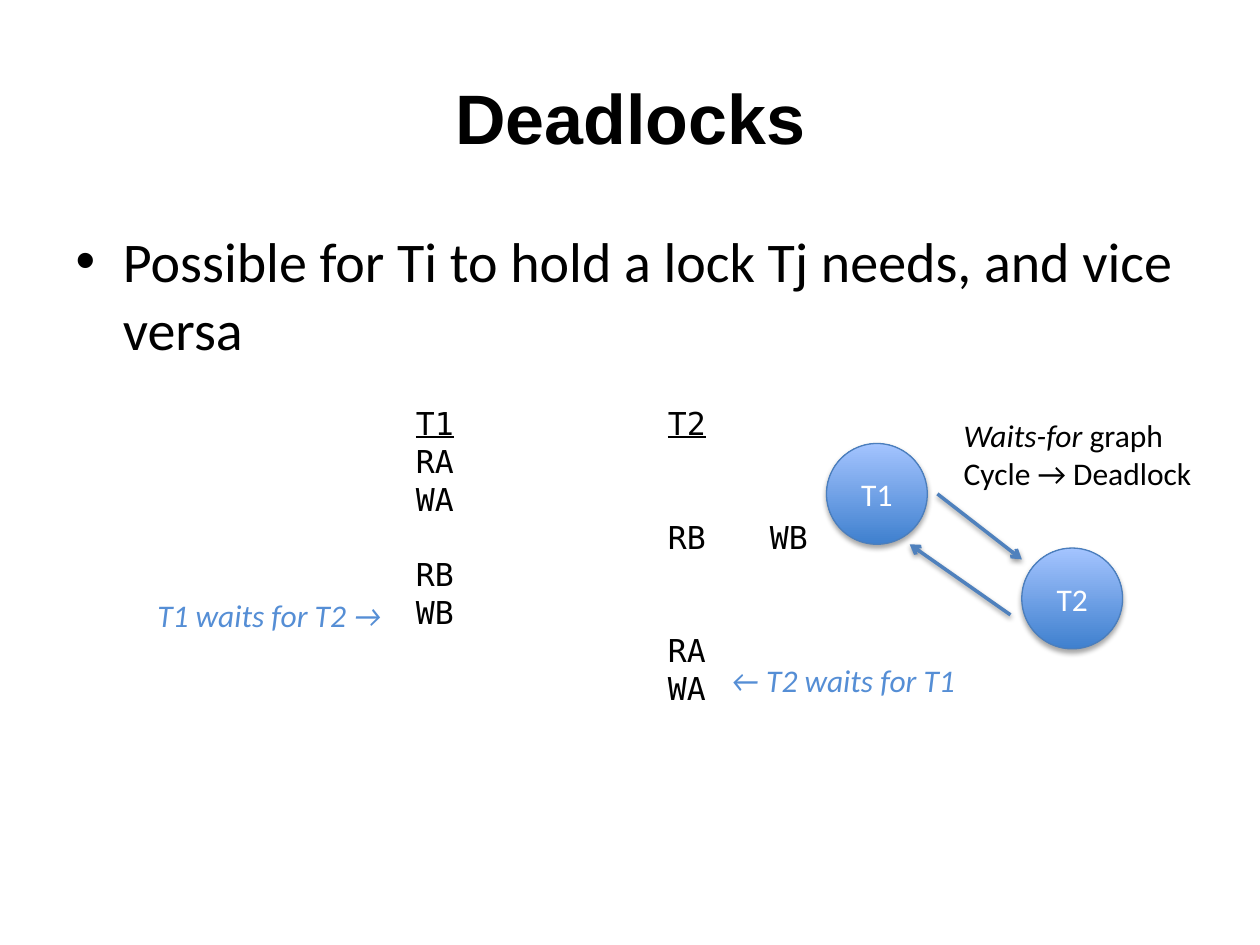
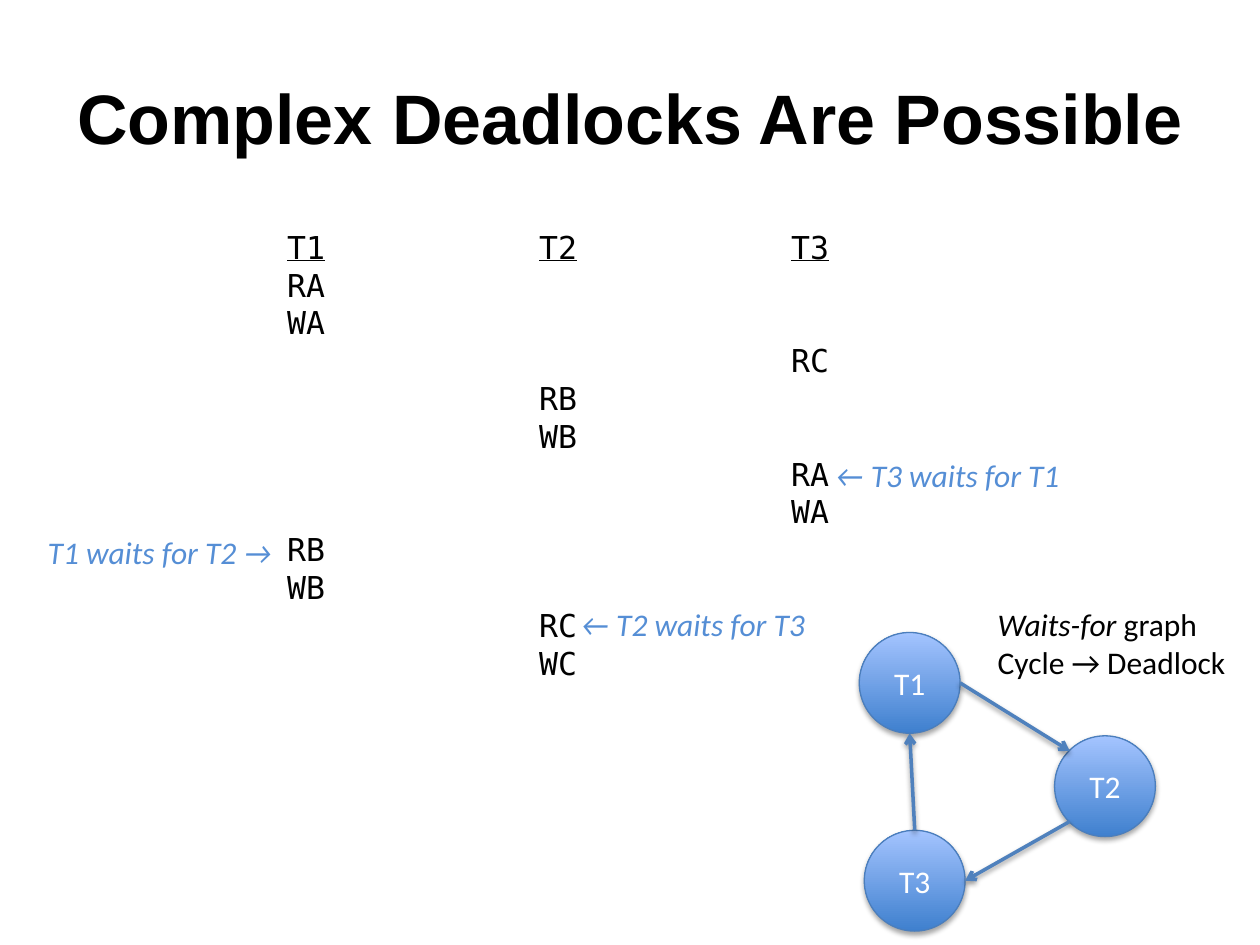
from lxml import etree
from pptx import Presentation
from pptx.dml.color import RGBColor
from pptx.enum.shapes import MSO_CONNECTOR, MSO_SHAPE
from pptx.enum.text import MSO_ANCHOR, PP_ALIGN
from pptx.oxml.ns import qn
from pptx.util import Inches, Pt

STRAIGHT, OVAL, RECTANGLE = MSO_CONNECTOR.STRAIGHT, MSO_SHAPE.OVAL, MSO_SHAPE.RECTANGLE
TOP, MIDDLE = MSO_ANCHOR.TOP, MSO_ANCHOR.MIDDLE
LEFT, CENTER = PP_ALIGN.LEFT, PP_ALIGN.CENTER

BLACK = RGBColor(0x00, 0x00, 0x00)
WHITE = RGBColor(0xFF, 0xFF, 0xFF)
NOTE_BLUE = RGBColor(0x55, 0x8E, 0xD5)
ARROW_BLUE = RGBColor(0x4F, 0x81, 0xBD)
NODE_EDGE = RGBColor(0x4B, 0x7E, 0xBC)
NODE_BOTTOM = RGBColor(0x3F, 0x80, 0xCE)
NODE_TOP = RGBColor(0xA4, 0xC4, 0xFF)

HEAD_FONT, BODY_FONT, CODE_FONT = "Arial", "Calibri", "DejaVu Sans Mono"
TITLE_ONLY, TITLE_AND_CONTENT = 5, 1

# Points on a node, as offsets from its centre
RADIUS = 0.4
DIAGONAL = 0.28
NODE_RIGHT, NODE_HEAD, NODE_FOOT = (RADIUS, 0), (0, -RADIUS), (0, RADIUS)
UPPER_LEFT, LOWER_LEFT = (-DIAGONAL, -DIAGONAL), (-DIAGONAL, DIAGONAL)

# Content: schedule steps are (column, text); arrows are (node, offset, node, offset)
SLIDES = [
    {
        "title": "Deadlocks",
        "bullet": "Possible for Ti to hold a lock Tj needs, and vice versa",
        "schedule_box": (2.7, 3.16, 4.01, 3.43),
        "tab_stops": [2.0, 2.81],
        "transactions": ["T1", "T2"],
        "steps": [(0, "RA"), (0, "WA"), (1, "RB\tWB"), (0, "RB"), (0, "WB"),
                  (1, "RA"), (1, "WA")],
        "waits": [("T1 waits for T2 →", 1.15, 4.68), ("← T2 waits for T1", 5.7, 5.2)],
        "nodes": {"T1": (6.96, 3.92), "T2": (8.51, 4.75)},
        "arrows": [("T1", (0.48, 0), "T2", (-0.4, -0.31)),
                   ("T2", (-0.49, 0.13), "T1", (0.26, 0.4))],
        "caption_at": (7.55, 3.25),
    },
    {
        "title": "Complex Deadlocks Are Possible",
        "bullet": None,
        "schedule_box": (1.68, 1.76, 8.14, 4.34),
        "tab_stops": [2.0, 4.0],
        "transactions": ["T1", "T2", "T3"],
        "steps": [(0, "RA"), (0, "WA"), (2, "RC"), (1, "RB"), (1, "WB"), (2, "RA"),
                  (2, "WA"), (0, "RB"), (0, "WB"), (1, "RC"), (1, "WC")],
        "waits": [("T1 waits for T2 →", 0.28, 4.18), ("← T2 waits for T3", 4.51, 4.75),
                  ("← T3 waits for T1", 6.53, 3.57)],
        "nodes": {"T1": (7.22, 5.42), "T2": (8.77, 6.24), "T3": (7.26, 6.99)},
        "arrows": [("T1", NODE_RIGHT, "T2", UPPER_LEFT),
                   ("T2", LOWER_LEFT, "T3", NODE_RIGHT),
                   ("T3", NODE_HEAD, "T1", NODE_FOOT)],
        "caption_at": (7.82, 4.75),
    },
]
CAPTION_LEAD, CAPTION_REST = "Waits-for ", "graph"
CAPTION_RULE = "Cycle → Deadlock"


def style(para, font=BODY_FONT, size=18, color=BLACK, align=LEFT):
    para.alignment = align
    para.font.name = font
    para.font.size = Pt(size)
    para.font.color.rgb = color


def add_span(para, text):
    span = para.add_run()
    span.text = text
    return span


def add_shadow(shape, opacity, distance):
    effects = etree.SubElement(shape._element.spPr, qn("a:effectLst"))
    shadow = etree.SubElement(effects, qn("a:outerShdw"), blurRad=str(Pt(3.1)),
                              dist=str(Pt(distance)), dir="5400000", rotWithShape="0")
    color = etree.SubElement(shadow, qn("a:srgbClr"), val="000000")
    etree.SubElement(color, qn("a:alpha"), val=str(opacity * 1000))


def set_tab_stops(para, stops):
    tabs = etree.Element(qn("a:tabLst"))
    for stop in stops:
        etree.SubElement(tabs, qn("a:tab"), pos=str(Inches(stop)), algn="l")
    para._p.get_or_add_pPr().insert(0, tabs)


def add_schedule(page, place, stops, transactions, steps):
    box = page.shapes.add_shape(RECTANGLE, *map(Inches, place))
    box.shadow.inherit = False
    box.fill.solid()
    box.fill.fore_color.rgb = WHITE
    box.line.fill.background()
    frame = box.text_frame
    frame.word_wrap = True
    frame.vertical_anchor = TOP
    frame.margin_left = Inches(0.6)

    header = frame.paragraphs[0]
    for column, name in enumerate(transactions):
        if column:
            add_span(header, "\t")
        add_span(header, name).font.underline = True
    for column, text in steps:
        add_span(frame.add_paragraph(), "\t" * column + text)
    for para in frame.paragraphs:
        style(para, CODE_FONT)
        set_tab_stops(para, stops)


def add_wait(page, text, left, top):
    box = page.shapes.add_textbox(Inches(left), Inches(top), Inches(2.02), Inches(0.4))
    box.text_frame.word_wrap = False
    para = box.text_frame.paragraphs[0]
    para.text = text
    style(para, color=NOTE_BLUE)
    para.font.italic = True


def add_node(page, name, center):
    x, y = center
    node = page.shapes.add_shape(OVAL, Inches(x - RADIUS), Inches(y - RADIUS),
                                 Inches(2 * RADIUS), Inches(2 * RADIUS))
    node.fill.gradient()
    node.fill.gradient_angle = 90
    for stop, color in zip(node.fill.gradient_stops, (NODE_BOTTOM, NODE_TOP)):
        stop.color.rgb = color
    node.line.color.rgb = NODE_EDGE
    node.line.width = Pt(0.75)
    add_shadow(node, 35, 1.8)
    node.text_frame.vertical_anchor = MIDDLE
    para = node.text_frame.paragraphs[0]
    para.text = name
    style(para, color=WHITE, align=CENTER)


def add_arrow(page, start, end):
    arrow = page.shapes.add_connector(STRAIGHT, *map(Inches, start + end))
    arrow.line.color.rgb = ARROW_BLUE
    arrow.line.width = Pt(2)
    etree.SubElement(arrow.line._get_or_add_ln(), qn("a:tailEnd"), type="arrow")
    add_shadow(arrow, 38, 1.6)


def add_caption(page, left, top):
    box = page.shapes.add_textbox(Inches(left), Inches(top), Inches(2.15), Inches(0.71))
    frame = box.text_frame
    frame.word_wrap = True
    first = frame.paragraphs[0]
    add_span(first, CAPTION_LEAD).font.italic = True
    add_span(first, CAPTION_REST)
    frame.add_paragraph().text = CAPTION_RULE
    for para in frame.paragraphs:
        style(para)


def shifted(center, offset):
    return center[0] + offset[0], center[1] + offset[1]


def place_placeholder(holder, place, text):
    holder.left, holder.top, holder.width, holder.height = map(Inches, place)
    para = holder.text_frame.paragraphs[0]
    para.text = text
    return para


def add_page(deck, content):
    layout = TITLE_AND_CONTENT if content["bullet"] else TITLE_ONLY
    page = deck.slides.add_slide(deck.slide_layouts[layout])

    # Title and bullet
    title = place_placeholder(page.shapes.title, (0.5, 0.3, 9, 1.25), content["title"])
    style(title, HEAD_FONT, 40, align=CENTER)
    title.font.bold = True
    if content["bullet"]:
        bullet = place_placeholder(page.placeholders[1], (0.5, 1.75, 9, 4.95),
                                   content["bullet"])
        style(bullet, size=32)

    # Schedule with its waits
    add_schedule(page, content["schedule_box"], content["tab_stops"],
                 content["transactions"], content["steps"])
    for wait in content["waits"]:
        add_wait(page, *wait)

    # Waits-for graph
    nodes = content["nodes"]
    for name, center in nodes.items():
        add_node(page, name, center)
    for source, leave, target, arrive in content["arrows"]:
        add_arrow(page, shifted(nodes[source], leave), shifted(nodes[target], arrive))
    add_caption(page, *content["caption_at"])


def main():
    deck = Presentation()
    deck.slide_width, deck.slide_height = Inches(10), Inches(7.5)
    for content in SLIDES:
        add_page(deck, content)
    deck.save("out.pptx")


if __name__ == "__main__":
    main()
